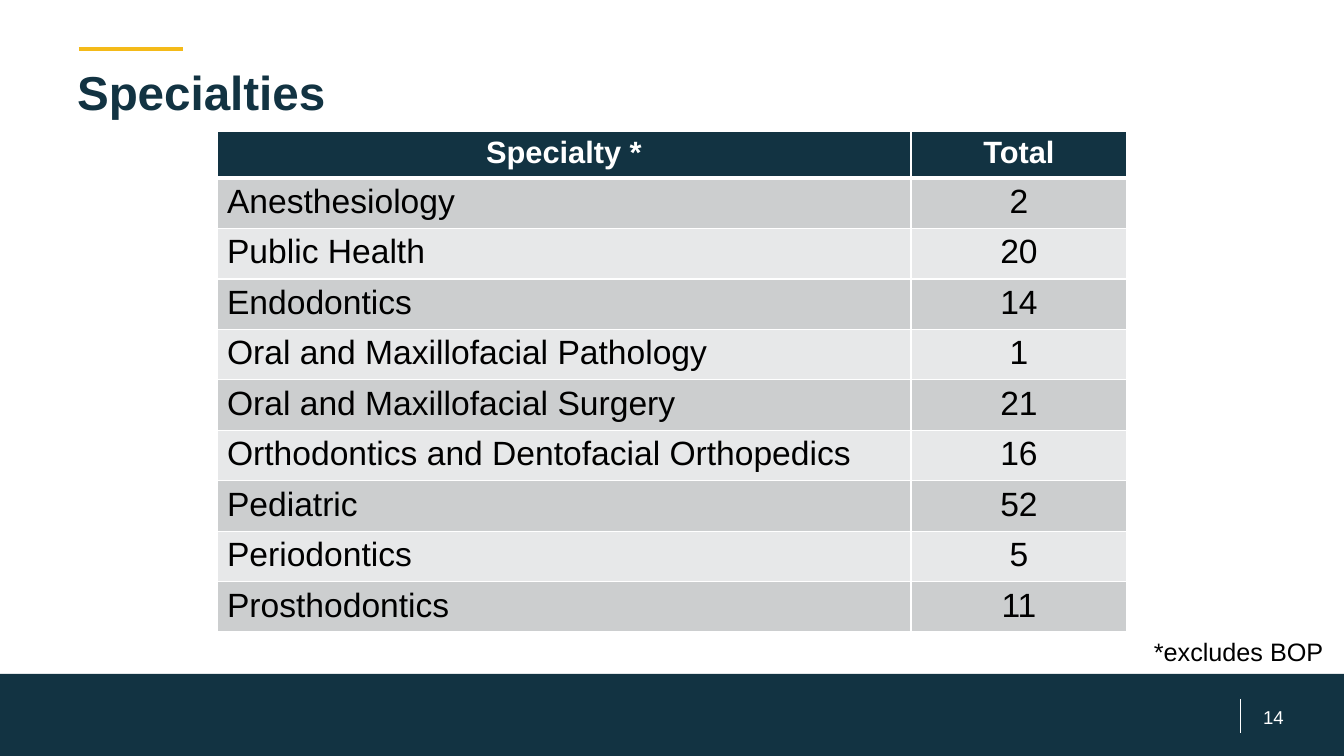
from lxml import etree
from pptx import Presentation
from pptx.dml.color import RGBColor
from pptx.enum.shapes import MSO_CONNECTOR, MSO_SHAPE
from pptx.enum.text import MSO_ANCHOR, MSO_AUTO_SIZE, PP_ALIGN
from pptx.oxml.ns import qn
from pptx.util import Pt

# Content
TITLE = "Specialties"
HEADER = ("Specialty *", "Total")
SPECIALTIES = [
    ("Anesthesiology", "2"),
    ("Public Health", "20"),
    ("Endodontics", "14"),
    ("Oral and Maxillofacial Pathology", "1"),
    ("Oral and Maxillofacial Surgery", "21"),
    ("Orthodontics and Dentofacial Orthopedics", "16"),
    ("Pediatric", "52"),
    ("Periodontics", "5"),
    ("Prosthodontics", "11"),
]
FOOTNOTE = "*excludes BOP"
PAGE_NUMBER = "14"

# Colours and constants
NAVY = RGBColor(0x12, 0x33, 0x42)
GOLD = RGBColor(0xF4, 0xBA, 0x18)
WHITE = RGBColor(0xFF, 0xFF, 0xFF)
BLACK = RGBColor(0x00, 0x00, 0x00)
BANDS = (RGBColor(0xCC, 0xCE, 0xCF), RGBColor(0xE7, 0xE8, 0xE9))
LEFT, CENTER = PP_ALIGN.LEFT, PP_ALIGN.CENTER
TOP, MIDDLE = MSO_ANCHOR.TOP, MSO_ANCHOR.MIDDLE
NO_FIT = MSO_AUTO_SIZE.NONE
STRAIGHT, RECTANGLE = MSO_CONNECTOR.STRAIGHT, MSO_SHAPE.RECTANGLE

# Layout in px
SLIDE_W, SLIDE_H = 1344, 756
TABLE_LEFT, TABLE_TOP = 217, 131
COLUMN_WIDTHS = (694, 216)
HEADER_H, BODY_H = 47, 454
FOOTER_TOP = 674


def px(value):
    return round(value * 914400 / 100.8)


def box(*lengths):
    return [px(length) for length in lengths]


def write(frame, text, size, color, align=LEFT, bold=False, **frame_format):
    for key, value in frame_format.items():
        setattr(frame, key, value)
    paragraph = frame.paragraphs[0]
    paragraph.text = text
    paragraph.alignment = align
    font_format = {"name": "Arial", "size": Pt(size), "bold": bold}
    for key, value in font_format.items():
        setattr(paragraph.runs[0].font, key, value)
    paragraph.runs[0].font.color.rgb = color


def add_rule(shapes, ends, color, width):
    rule = shapes.add_connector(STRAIGHT, *box(*ends))
    rule.line.color.rgb = color
    rule.line.width = Pt(width)
    etree.SubElement(rule._element.spPr, qn("a:effectLst"))


def add_borders(cell, widths):
    properties = cell._tc.get_or_add_tcPr()
    for side, width in widths.items():
        border = etree.SubElement(properties, qn(f"a:ln{side}"), w=str(Pt(width)))
        fill = etree.SubElement(border, qn("a:solidFill"))
        etree.SubElement(fill, qn("a:srgbClr"), val=str(WHITE))


def main():
    deck = Presentation()
    deck.slide_width, deck.slide_height = box(SLIDE_W, SLIDE_H)
    slide = deck.slides.add_slide(deck.slide_layouts[5])
    shapes = slide.shapes

    # Title with accent rule
    add_rule(shapes, (79, 49, 183, 49), GOLD, 2.5)
    title = shapes.title
    title.left, title.top, title.width, title.height = box(67, 53, 1210, 108)
    write(title.text_frame, TITLE, 34, NAVY, bold=True, vertical_anchor=TOP,
          auto_size=NO_FIT, word_wrap=True, margin_top=px(10))

    # Footer band with page number
    footer = shapes.add_shape(
        RECTANGLE, *box(0, FOOTER_TOP, SLIDE_W, SLIDE_H - FOOTER_TOP))
    footer.shadow.inherit = False
    footer.fill.solid()
    footer.fill.fore_color.rgb = NAVY
    footer.line.fill.background()
    add_rule(shapes, (1241, 699, 1241, 733), WHITE, 0.75)
    page = shapes.add_textbox(*box(1234, 703, 79, 28))
    write(page.text_frame, PAGE_NUMBER, 13.3, WHITE, CENTER,
          vertical_anchor=MIDDLE, word_wrap=True)

    # Footnote
    footnote = shapes.add_textbox(*box(1144, 631, 192, 40))
    write(footnote.text_frame, FOOTNOTE, 18, BLACK, word_wrap=False)

    # Specialties table
    rows = [HEADER] + SPECIALTIES
    table = shapes.add_table(
        len(rows), len(HEADER),
        *box(TABLE_LEFT, TABLE_TOP, sum(COLUMN_WIDTHS), HEADER_H + BODY_H)).table
    for column, width in zip(table.columns, COLUMN_WIDTHS):
        column.width = px(width)
    for r, values in enumerate(rows):
        is_header = r == 0
        table.rows[r].height = px(HEADER_H if is_header else BODY_H / len(SPECIALTIES))
        for c, value in enumerate(values):
            cell = table.cell(r, c)
            add_borders(cell, {"L": 1, "R": 1, "T": 3 if r == 1 else 1,
                               "B": 3 if is_header else 1})
            cell.fill.solid()
            cell.fill.fore_color.rgb = NAVY if is_header else BANDS[(r - 1) % 2]
            write(cell.text_frame, value, 22 if is_header else 24,
                  WHITE if is_header else BLACK,
                  CENTER if is_header or c else LEFT, is_header)

    deck.save("out.pptx")


if __name__ == "__main__":
    main()
